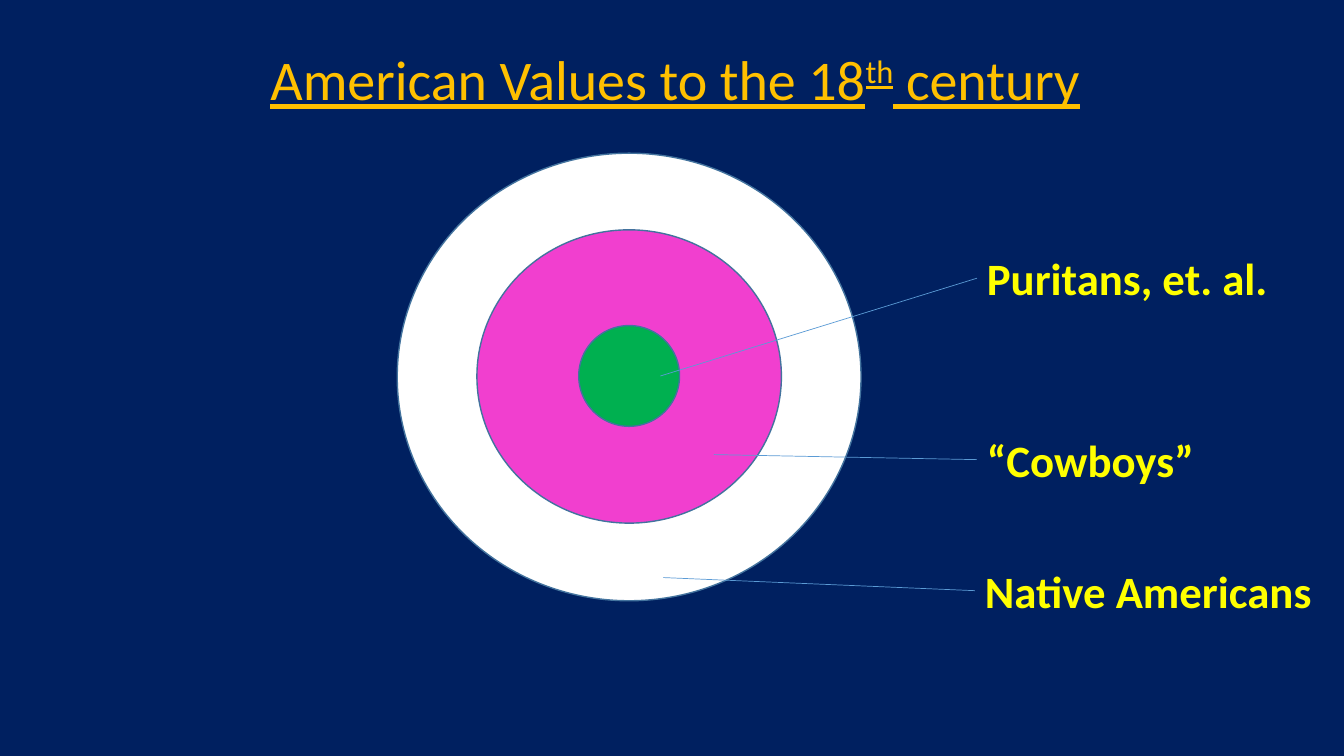
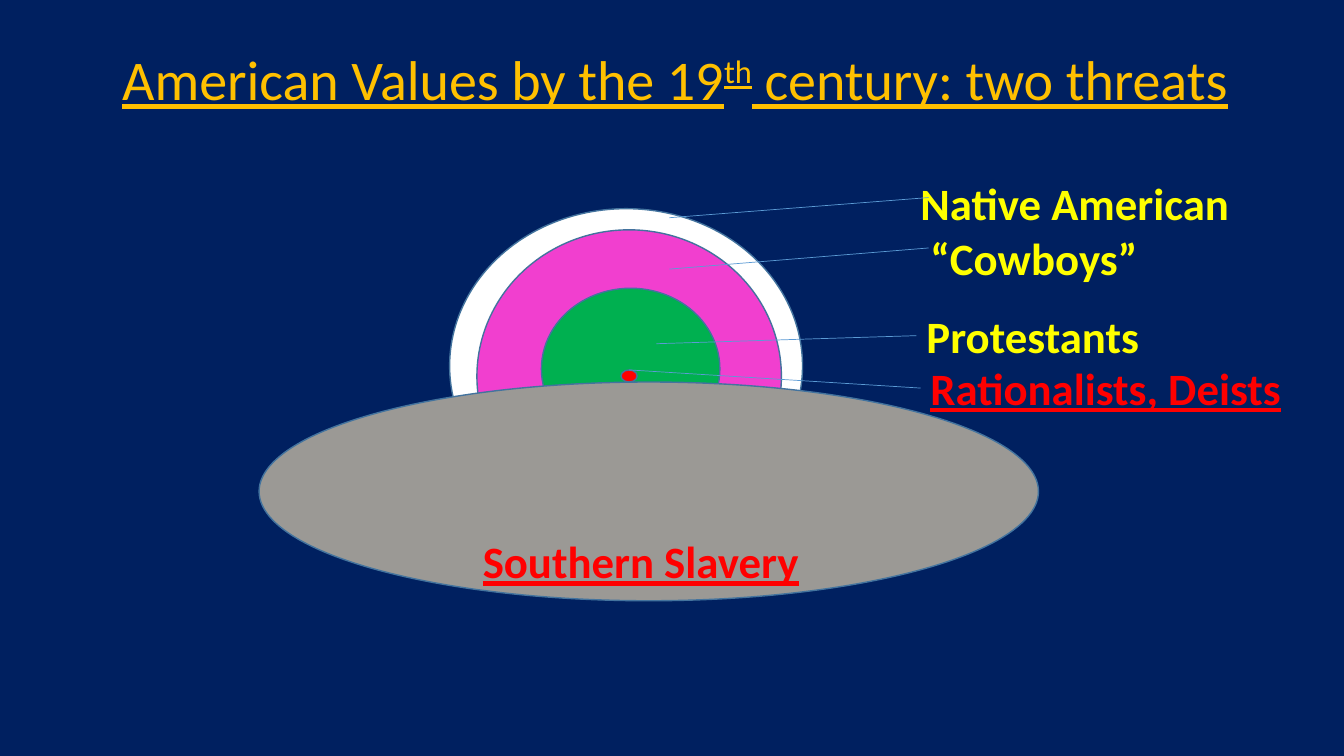
from pptx import Presentation
from pptx.dml.color import RGBColor
from pptx.enum.shapes import MSO_CONNECTOR, MSO_SHAPE
from pptx.enum.text import MSO_ANCHOR, PP_ALIGN
from pptx.oxml.ns import qn
from pptx.util import Inches, Pt
from lxml import etree

OVAL = MSO_SHAPE.OVAL
LINE = MSO_CONNECTOR.STRAIGHT
MIDDLE = MSO_ANCHOR.MIDDLE
CENTER = PP_ALIGN.CENTER
FONT = "Calibri"

HEX = {
    "navy": "002060",
    "gold": "FFC000",
    "yellow": "FFFF00",
    "red": "FF0000",
    "white": "FFFFFF",
    "pink": "F13FCF",
    "green": "00B050",
    "gray": "9B9995",
    "rim": "43739E",
    "lead": "5B9BD5",
}
RGB = {name: RGBColor.from_string(code) for name, code in HEX.items()}

SLIDES = [
    {
        "title": ["American Values to the 18", "th", " century"],
        "ovals": [
            ("white", 3.94, 1.52, 4.6, 4.44),
            ("pink", 4.73, 2.28, 3.02, 2.91),
            ("green", 5.74, 3.23, 1, 1),
        ],
        "labels": [
            ("Puritans, et. al.", "yellow", 9.69, 2.44, 3.1),
            ("“Cowboys”", "yellow", 9.69, 4.24, 2.57),
            ("Native Americans", "yellow", 9.67, 5.54, 3.67),
        ],
        "leads": [
            (9.69, 2.76, 6.55, 3.73),
            (9.69, 4.56, 7.08, 4.51),
            (9.67, 5.86, 6.58, 5.73),
        ],
    },
    {
        "title": ["American Values by the 19", "th", " century: two threats"],
        "ovals": [
            ("white", 4.46, 2.07, 3.5, 3.12),
            ("pink", 4.73, 2.28, 3.02, 2.91),
            ("green", 5.37, 2.86, 1.77, 1.6),
            ("red", 6.16, 3.67, 0.16, 0.12),
            ("gray", 2.57, 3.79, 7.73, 2.17),
        ],
        "labels": [
            ("Native American", "yellow", 9.03, 1.69, 3.64),
            ("“Cowboys”", "yellow", 9.13, 2.24, 2.85),
            ("Protestants", "yellow", 9.09, 3.01, 2.89),
            ("Rationalists, Deists", "red", 9.13, 3.53, 3.78),
            ("Southern Slavery", "red", 4.69, 5.25, 5.86),
        ],
        "leads": [
            (9.13, 3.85, 6.24, 3.67),
            (9.09, 3.33, 6.51, 3.41),
            (9.21, 1.96, 6.64, 2.16),
            (9.21, 2.46, 6.64, 2.67),
        ],
    },
]


def add_text(slide, box, parts, size, color):
    frame = slide.shapes.add_textbox(*map(Inches, box)).text_frame
    frame.word_wrap = True
    para = frame.paragraphs[0]
    for part in parts:
        run = para.add_run()
        run.text = part
        run.font.name = FONT
        run.font.size = Pt(size)
        run.font.color.rgb = RGB[color]
    return frame


prs = Presentation()
prs.slide_width = Inches(13.33)
prs.slide_height = Inches(7.5)
back = prs.slide_master.background.fill
back.solid()
back.fore_color.rgb = RGB["navy"]
blank = prs.slide_layouts[6]

for page in SLIDES:
    slide = prs.slides.add_slide(blank)

    for color, *box in page["ovals"]:
        oval = slide.shapes.add_shape(OVAL, *map(Inches, box))
        oval.shadow.inherit = False
        oval.fill.solid()
        oval.fill.fore_color.rgb = RGB[color]
        oval.line.color.rgb = RGB["rim"]
        oval.line.width = Pt(1)

    for text, color, left, top, width in page["labels"]:
        frame = add_text(slide, (left, top, width, 0.64), [text], 32, color)
        font = frame.paragraphs[0].runs[0].font
        font.bold = True
        font.underline = color == "red"

    for ends in page["leads"]:
        lead = slide.shapes.add_connector(LINE, *map(Inches, ends))
        lead.line.color.rgb = RGB["lead"]
        lead.line.width = Pt(0.5)
        etree.SubElement(lead._element.spPr, qn("a:effectLst"))

    frame = add_text(slide, (0.6, 0.21, 12.19, 1.22), page["title"], 40, "gold")
    frame.vertical_anchor = MIDDLE
    para = frame.paragraphs[0]
    para.alignment = CENTER
    para.line_spacing = 0.9
    for run in para.runs:
        run.font.underline = True
    para.runs[1]._r.get_or_add_rPr().set("baseline", "30000")

prs.save("out.pptx")
